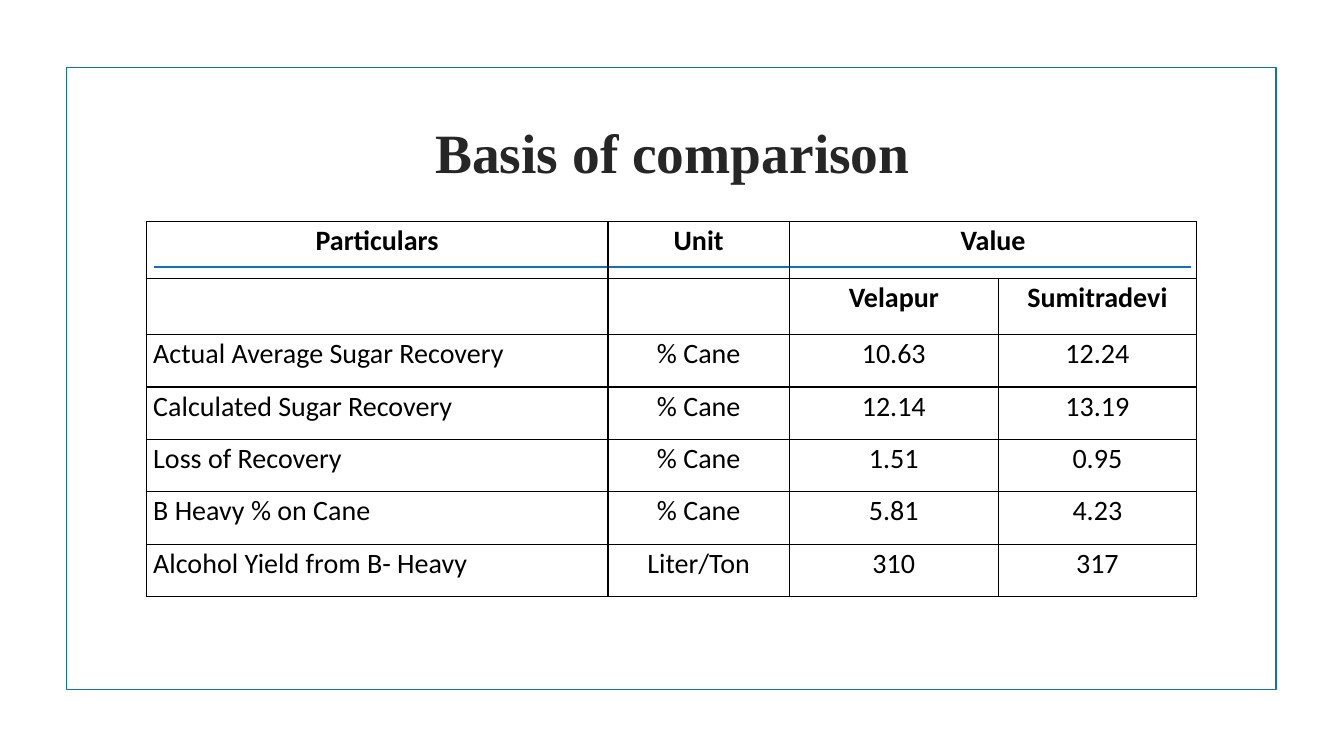
import pptx
import pptx.util
import pptx.dml.color
import pptx.enum.shapes
import pptx.enum.text
import pptx.oxml.ns
from lxml import etree

Inches, Pt = pptx.util.Inches, pptx.util.Pt
ALIGN = pptx.enum.text.PP_ALIGN
COLORS = {"accent": "0F6FC6", "title": "262626", "table": "000000"}
WIDTH, HEIGHT = 13.33, 7.5
COLUMNS = [4.58, 1.8, 2.07, 1.97]
ROWS = [0.56] * 2 + [0.52] * 5
TABLE_LEFT, TABLE_TOP = 1.45, 2.2
CONTENTS = [
    ["Particulars", "Unit", "Value", ""],
    ["", "", "Velapur", "Sumitradevi"],
    ["Actual Average Sugar Recovery", "% Cane", "10.63", "12.24"],
    ["Calculated Sugar Recovery", "% Cane", "12.14", "13.19"],
    ["Loss of Recovery", "% Cane", "1.51", "0.95"],
    ["B Heavy % on Cane", "% Cane", "5.81", "4.23"],
    ["Alcohol Yield from B- Heavy", "Liter/Ton", "310", "317"],
]


def write_text(frame, text, font="Calibri", size=20, color="table", bold=False,
               align=ALIGN.CENTER, spacing=1.07):
    paragraph = frame.paragraphs[0]
    paragraph.alignment = align
    paragraph.line_spacing = spacing
    run = paragraph.add_run()
    run.text = text
    run.font.name = font
    run.font.size = Pt(size)
    run.font.bold = bold
    run.font.color.rgb = pptx.dml.color.RGBColor.from_string(COLORS[color])


def draw_borders(cell, color, width):
    properties = cell._tc.get_or_add_tcPr()
    for side in ("a:lnL", "a:lnR", "a:lnT", "a:lnB"):
        line = etree.SubElement(properties, pptx.oxml.ns.qn(side), w=str(Pt(width)))
        fill = etree.SubElement(line, pptx.oxml.ns.qn("a:solidFill"))
        etree.SubElement(fill, pptx.oxml.ns.qn("a:srgbClr"), val=COLORS[color])


presentation = pptx.Presentation()
presentation.slide_width = Inches(WIDTH)
presentation.slide_height = Inches(HEIGHT)
slide = presentation.slides.add_slide(presentation.slide_layouts[6])
accent = pptx.dml.color.RGBColor.from_string(COLORS["accent"])

# Frame and rule behind the table
border = slide.shapes.add_shape(
    pptx.enum.shapes.MSO_SHAPE.RECTANGLE,
    Inches(0.66), Inches(0.67), Inches(12), Inches(6.17))
border.shadow.inherit = False
border.fill.background()
rule = slide.shapes.add_connector(
    pptx.enum.shapes.MSO_CONNECTOR.STRAIGHT,
    Inches(1.53), Inches(2.65), Inches(11.81), Inches(2.65))
etree.SubElement(rule._element.spPr, pptx.oxml.ns.qn("a:effectLst"))
for shape in (border, rule):
    shape.line.color.rgb = accent
    shape.line.width = Pt(1.25)

# Title
title = slide.shapes.add_textbox(Inches(1.42), Inches(1.14), Inches(10.5), Inches(0.73))
title.text_frame.word_wrap = True
title.text_frame.vertical_anchor = pptx.enum.text.MSO_ANCHOR.MIDDLE
write_text(title.text_frame, "Basis of comparison", font="Times New Roman",
           size=39.6, color="title", bold=True, spacing=1.0)

# Comparison table
table = slide.shapes.add_table(
    len(ROWS), len(COLUMNS), Inches(TABLE_LEFT), Inches(TABLE_TOP),
    Inches(sum(COLUMNS)), Inches(sum(ROWS))).table
table.first_row = False
table.horz_banding = False
for column, width in zip(table.columns, COLUMNS):
    column.width = Inches(width)
for row, height in zip(table.rows, ROWS):
    row.height = Inches(height)
table.cell(0, 2).merge(table.cell(0, 3))

for row_index, texts in enumerate(CONTENTS):
    is_header = row_index < 2
    for column_index, text in enumerate(texts):
        cell = table.cell(row_index, column_index)
        draw_borders(cell, "table", 1)
        cell.fill.background()
        cell.margin_left = cell.margin_right = Inches(0.07)
        cell.margin_top = cell.margin_bottom = 0
        if text:
            is_label = column_index == 0 and not is_header
            write_text(cell.text_frame, text, bold=is_header,
                       align=ALIGN.LEFT if is_label else ALIGN.CENTER)

presentation.save("out.pptx")
